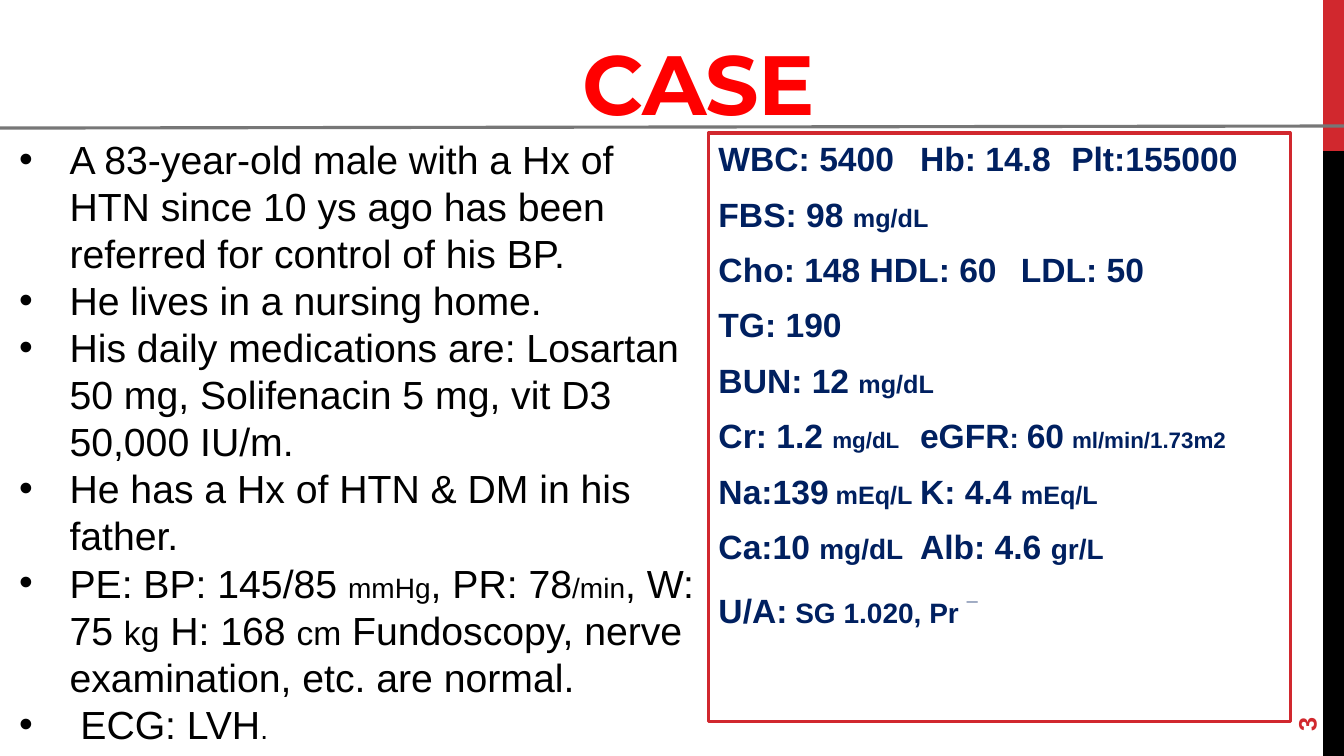
import pptx
import pptx.util
import pptx.dml.color
import pptx.enum.shapes
import pptx.enum.text
import pptx.oxml.xmlchemy

Pt = pptx.util.Pt
RGBColor = pptx.dml.color.RGBColor
Anchor = pptx.enum.text.MSO_ANCHOR
Align = pptx.enum.text.PP_ALIGN
Shape = pptx.enum.shapes.MSO_SHAPE

RED = RGBColor(0xD1, 0x28, 0x2E)
BRIGHT = RGBColor(0xFF, 0x00, 0x00)
NAVY = RGBColor(0x00, 0x20, 0x60)
GRAY = RGBColor(0x77, 0x77, 0x77)
BLACK = RGBColor(0x00, 0x00, 0x00)
WIDE, HIGH = 960, 540

# Each item is a list of text and size pairs
STORY = [
    [("A 83-year-old male with a Hx of HTN since 10 ys ago has been "
      "referred for control of his BP.", 28)],
    [("He lives in a nursing home.", 28)],
    [("His daily medications are: Losartan 50 mg, Solifenacin 5 mg, "
      "vit D3 50,000 IU/m.", 28)],
    [("He has a Hx of HTN & DM in his father.", 28)],
    [("PE: BP: 145/85 ", 28), ("mmHg", 20), (", PR: 78", 28), ("/min", 20),
     (", W: 75 ", 28), ("kg", 24), (" H: 168 ", 28), ("cm", 24),
     (" Fundoscopy, nerve examination, etc. are normal.", 28)],
    [(" ECG: LVH", 28), (".", 20)],
]

# Each row has its tab stops and its text and size pairs
LABS = [
    ([146, 266], [("WBC: 5400\tHb: 14.8\tPlt:155000", 24)]),
    ([], [("FBS: 98 ", 24), ("mg/dL", 18)]),
    ([129, 246], [("Cho: 148\tHDL: 60\tLDL: 50", 24)]),
    ([], [("TG: 190", 24)]),
    ([], [("BUN: 12 ", 24), ("mg/dL", 18)]),
    ([144], [("Cr: 1.2 ", 24), ("mg/dL", 16), ("\teGFR", 24), (": ", 20),
             ("60", 24), (" ", 20), ("ml/min/1.73m2", 16)]),
    ([159], [("Na:139", 24), (" mEq/L", 18), ("\tK: 4.4 ", 24),
             ("mEq/L", 18)]),
    ([159], [("Ca:10 ", 24), ("mg/dL", 20), ("\tAlb: 4.6 ", 24),
             ("gr/L", 20)]),
    ([], [("U/A:", 24), (" SG 1.020, Pr ", 20), ("_", 24)]),
]


def add_sub(parent, tag, **attrs):
    node = pptx.oxml.xmlchemy.OxmlElement(tag)
    for name, value in attrs.items():
        node.set(name, str(value))
    parent.append(node)
    return node


def place(shape, left, top, width, height):
    shape.left, shape.top = Pt(left), Pt(top)
    shape.width, shape.height = Pt(width), Pt(height)


def set_font(font, size, color, name="Arial", bold=False):
    font.name, font.size, font.bold = name, Pt(size), bold
    font.color.rgb = color


def get_frame(holder):
    frame = holder.text_frame
    frame.word_wrap = True
    frame.auto_size = pptx.enum.text.MSO_AUTO_SIZE.NONE
    return frame


def next_para(frame, index):
    return frame.add_paragraph() if index else frame.paragraphs[0]


def fill_para(para, parts, color, bold=False):
    base = parts[0][1]
    set_font(para.font, base, color, bold=bold)
    for text, size in parts:
        run = para.add_run()
        run.text = text
        if size != base:
            run.font.size = Pt(size)


def add_title(holder, text):
    place(holder, 195, 19, 608, 79)
    frame = get_frame(holder)
    frame.vertical_anchor = Anchor.BOTTOM
    para = frame.paragraphs[0]
    para.text = text
    para.alignment = Align.CENTER
    set_font(para.font, 60, BRIGHT, "Montserrat", True)
    para.runs[0].font._rPr.set("spc", "-60")


def add_story(holder):
    place(holder, 6.5, 93, 499.5, 447)
    frame = get_frame(holder)
    for index, parts in enumerate(STORY):
        para = next_para(frame, index)
        props = para._p.get_or_add_pPr()
        props.set("marL", str(Pt(36)))
        props.set("indent", str(Pt(-36)))
        add_sub(props, "a:buFont", typeface="Arial")
        add_sub(props, "a:buChar", char="•")
        para.space_before = Pt(0)
        fill_para(para, parts, BLACK)


def add_labs(holder):
    place(holder, 506, 95, 415.5, 420.5)
    holder.line.color.rgb = RED
    holder.line.width = Pt(2.25)
    frame = get_frame(holder)
    for index, (stops, parts) in enumerate(LABS):
        para = next_para(frame, index)
        props = para._p.get_or_add_pPr()
        props.set("marL", "0")
        props.set("indent", "0")
        add_sub(props, "a:buNone")
        if stops:
            tabs = add_sub(props, "a:tabLst")
            for stop in stops:
                add_sub(tabs, "a:tab", pos=Pt(stop), algn="l")
        if index == 0:
            para.space_before = Pt(0)
        para.space_after = Pt(6)
        fill_para(para, parts, NAVY, True)
    # Raise the minus sign after the last value
    para.runs[-1].font._rPr.set("baseline", "68000")


def add_bar(slide, top, height, color):
    bar = slide.shapes.add_shape(
        Shape.RECTANGLE, Pt(945), Pt(top), Pt(15), Pt(height))
    bar.shadow.inherit = False
    bar.fill.solid()
    bar.fill.fore_color.rgb = color
    bar.line.fill.background()


def add_rule(slide):
    rule = slide.shapes.add_connector(
        pptx.enum.shapes.MSO_CONNECTOR.STRAIGHT,
        Pt(0), Pt(91.5), Pt(WIDE), Pt(90))
    rule.line.color.rgb = GRAY
    rule.line.width = Pt(2.25)
    add_sub(rule._element.spPr, "a:effectLst")


def add_page(slide, text):
    box = slide.shapes.add_textbox(Pt(881.5), Pt(458.5), Pt(103.5), Pt(38))
    box.rotation = 270
    frame = get_frame(box)
    frame.vertical_anchor = Anchor.MIDDLE
    fill_para(frame.paragraphs[0], [(text, 18)], RED, True)


def main():
    deck = pptx.Presentation()
    deck.slide_width, deck.slide_height = Pt(WIDE), Pt(HIGH)
    slide = deck.slides.add_slide(deck.slide_layouts[3])
    title, left, right = slide.placeholders

    # Side band
    add_bar(slide, 0, 108, RED)
    add_bar(slide, 108, HIGH - 108, BLACK)

    # Heading, rule and page number
    add_title(title, "CASE")
    add_rule(slide)
    add_page(slide, "3")

    # History on the left, lab values on the right
    add_story(left)
    add_labs(right)
    deck.save("out.pptx")


if __name__ == "__main__":
    main()
